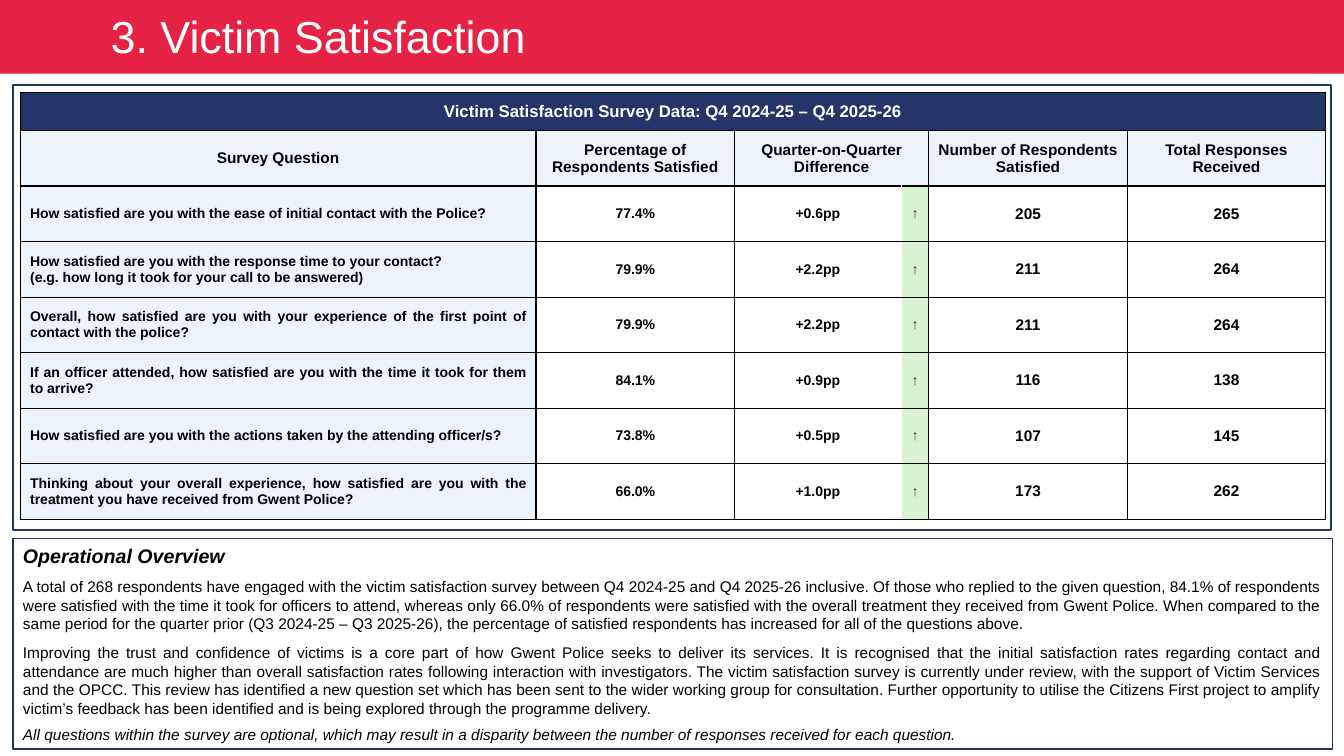
from lxml import etree
from pptx import Presentation
from pptx.dml.color import RGBColor
from pptx.enum import shapes, text
from pptx.oxml import ns
from pptx.util import Cm, Pt

NAVY = RGBColor(0x24, 0x35, 0x69)
RED = RGBColor(0xE6, 0x23, 0x44)
PALE_BLUE = RGBColor(0xEC, 0xF3, 0xFA)
PALE_GREEN = RGBColor(0xD9, 0xF2, 0xD0)
GREEN = RGBColor(0x00, 0x61, 0x00)
BLACK = RGBColor(0, 0, 0)
WHITE = RGBColor(0xFF, 0xFF, 0xFF)

CENTER = text.PP_ALIGN.CENTER
JUSTIFY = text.PP_ALIGN.JUSTIFY
WIDE = (0.25, 0.2)
HEADER = (0.1, 0.2)
TIGHT = (0.03, 0.02)
ARROW = (0.2, 0.2)

TABLE_TITLE = "Victim Satisfaction Survey Data: Q4 2024-25 – Q4 2025-26"
COLUMN_WIDTHS = (13, 5, 4.2, 0.7, 5, 5)
TITLE_ROW_HEIGHT = 0.95
ROW_HEIGHT = 1.4
HEADINGS = ("Survey Question", "Percentage of Respondents Satisfied",
            "Quarter-on-Quarter Difference", "",
            "Number of Respondents Satisfied", "Total Responses Received")
SURVEY = (
    ("How satisfied are you with the ease of initial contact with the Police?",
     "77.4%", "+0.6pp", "↑", "205", "265"),
    ("How satisfied are you with the response time to your contact?\n"
     "(e.g. how long it took for your call to be answered)",
     "79.9%", "+2.2pp", "↑", "211", "264"),
    ("Overall, how satisfied are you with your experience of the first point of "
     "contact with the police?", "79.9%", "+2.2pp", "↑", "211", "264"),
    ("If an officer attended, how satisfied are you with the time it took for them "
     "to arrive?", "84.1%", "+0.9pp", "↑", "116", "138"),
    ("How satisfied are you with the actions taken by the attending officer/s?",
     "73.8%", "+0.5pp", "↑", "107", "145"),
    ("Thinking about your overall experience, how satisfied are you with the "
     "treatment you have received from Gwent Police?",
     "66.0%", "+1.0pp", "↑", "173", "262"),
)
BODY_STYLES = (
    (10, JUSTIFY, WIDE, PALE_BLUE, BLACK),
    (10, CENTER, TIGHT, None, BLACK),
    (10, CENTER, TIGHT, None, BLACK),
    (10, CENTER, ARROW, PALE_GREEN, GREEN),
    (11, CENTER, TIGHT, None, BLACK),
    (11, CENTER, TIGHT, None, BLACK),
)
OVERVIEW = (
    ("Operational Overview", 14, True, True, 0),
    ("A total of 268 respondents have engaged with the victim satisfaction survey "
     "between Q4 2024-25 and Q4 2025-26 inclusive. Of those who replied to the given "
     "question, 84.1% of respondents were satisfied with the time it took for officers "
     "to attend, whereas only 66.0% of respondents were satisfied with the overall "
     "treatment they received from Gwent Police. When compared to the same period for "
     "the quarter prior (Q3 2024-25 – Q3 2025-26), the percentage of satisfied "
     "respondents has increased for all of the questions above.", 11, False, False, 7.4),
    ("Improving the trust and confidence of victims is a core part of how Gwent Police "
     "seeks to deliver its services. It is recognised that the initial satisfaction "
     "rates regarding contact and attendance are much higher than overall satisfaction "
     "rates following interaction with investigators. The victim satisfaction survey is "
     "currently under review, with the support of Victim Services and the OPCC. This "
     "review has identified a new question set which has been sent to the wider working "
     "group for consultation. Further opportunity to utilise the Citizens First project "
     "to amplify victim’s feedback has been identified and is being explored through "
     "the programme delivery.", 11, False, False, 7.4),
    ("All questions within the survey are optional, which may result in a disparity "
     "between the number of responses received for each question.", 11, False, True, 5.4),
)


def add_run(paragraph, words, size, color, bold=False, italic=False):
    """Append one formatted run to a paragraph."""
    run = paragraph.add_run()
    run.text = words
    font = run.font
    font.name, font.size, font.bold, font.italic = "Arial", Pt(size), bold, italic
    font.color.rgb = color


def add_box(slide, left, top, width, height, fill=None, line=None):
    """Add a plain rectangle and return it."""
    shape = slide.shapes.add_shape(shapes.MSO_SHAPE.RECTANGLE,
                                   Cm(left), Cm(top), Cm(width), Cm(height))
    shape.shadow.inherit = False
    paint(shape.fill, fill)
    paint(shape.line.fill, line)
    if line is not None:
        shape.line.width = Pt(1.25)
    return shape


def paint(fill, color):
    """Make a fill solid in a colour, or empty without one."""
    if color is None:
        fill.background()
    else:
        fill.solid()
        fill.fore_color.rgb = color


def add_title(slide):
    """Add the title band."""
    frame = add_box(slide, 0, 0, 33.87, 1.86, fill=RED).text_frame
    frame.word_wrap = True
    frame.vertical_anchor = text.MSO_ANCHOR.MIDDLE
    frame.margin_left, frame.margin_top = Cm(2.79), Cm(0.05)
    paragraph = frame.paragraphs[0]
    paragraph.alignment = text.PP_ALIGN.LEFT
    add_run(paragraph, "3. Victim Satisfaction", 32, WHITE)


def add_overview(slide):
    """Add the framed commentary below the table."""
    frame = add_box(slide, 0.33, 13.57, 33.25, 5.3, line=NAVY).text_frame
    frame.word_wrap = True
    frame.vertical_anchor = text.MSO_ANCHOR.TOP
    for index, (words, size, bold, italic, gap) in enumerate(OVERVIEW):
        paragraph = frame.add_paragraph() if index else frame.paragraphs[0]
        paragraph.alignment = JUSTIFY
        if gap:
            paragraph.space_before = Pt(gap)
        add_run(paragraph, words, size, BLACK, bold, italic)


def set_borders(cell, white_side=None):
    """Draw black cell borders, with one side optionally white."""
    properties = cell._tc.get_or_add_tcPr()
    for side in "LRTB":
        line = etree.SubElement(properties, ns.qn(f"a:ln{side}"), w=str(Pt(1)))
        solid = etree.SubElement(line, ns.qn("a:solidFill"))
        color = WHITE if side == white_side else BLACK
        etree.SubElement(solid, ns.qn("a:srgbClr"), val=str(color))


def fill_cell(cell, words, style, white_side=None):
    """Format a cell and write its bold text, one paragraph a line."""
    size, alignment, (side_margin, end_margin), fill, color = style
    set_borders(cell, white_side)
    paint(cell.fill, fill)
    cell.vertical_anchor = text.MSO_ANCHOR.MIDDLE
    cell.margin_left = cell.margin_right = Cm(side_margin)
    cell.margin_top = cell.margin_bottom = Cm(end_margin)
    if not words:
        return
    for index, line in enumerate(words.split("\n")):
        frame = cell.text_frame
        paragraph = frame.add_paragraph() if index else frame.paragraphs[0]
        paragraph.alignment = alignment
        add_run(paragraph, line, size, color, bold=True)


def add_survey_table(slide):
    """Add the survey results table."""
    row_count = len(SURVEY) + 2
    column_count = len(COLUMN_WIDTHS)
    height = TITLE_ROW_HEIGHT + ROW_HEIGHT * (row_count - 1)
    table = slide.shapes.add_table(row_count, column_count, Cm(0.51), Cm(2.34),
                                   Cm(sum(COLUMN_WIDTHS)), Cm(height)).table
    table.first_row = table.horz_banding = False
    for column, width in zip(table.columns, COLUMN_WIDTHS):
        column.width = Cm(width)
    for index, row in enumerate(table.rows):
        row.height = Cm(ROW_HEIGHT if index else TITLE_ROW_HEIGHT)
    table.cell(0, 0).merge(table.cell(0, column_count - 1))
    table.cell(1, 2).merge(table.cell(1, 3))

    for index, heading in enumerate(HEADINGS):
        title = "" if index else TABLE_TITLE
        fill_cell(table.cell(0, index), title, (12, CENTER, WIDE, NAVY, WHITE))
        margins = HEADER if index else WIDE
        fill_cell(table.cell(1, index), heading, (11, CENTER, margins, PALE_BLUE, BLACK))
    white_sides = {2: "R", 3: "L"}
    for row, values in enumerate(SURVEY, start=2):
        for column, (value, style) in enumerate(zip(values, BODY_STYLES)):
            fill_cell(table.cell(row, column), value, style, white_sides.get(column))


def main():
    """Build the slide and save it."""
    presentation = Presentation()
    presentation.slide_width, presentation.slide_height = Cm(33.87), Cm(19.05)
    slide = presentation.slides.add_slide(presentation.slide_layouts[6])
    add_box(slide, 0.33, 2.15, 33.22, 11.2, line=NAVY)
    add_title(slide)
    add_overview(slide)
    add_survey_table(slide)
    presentation.save("out.pptx")


if __name__ == "__main__":
    main()
